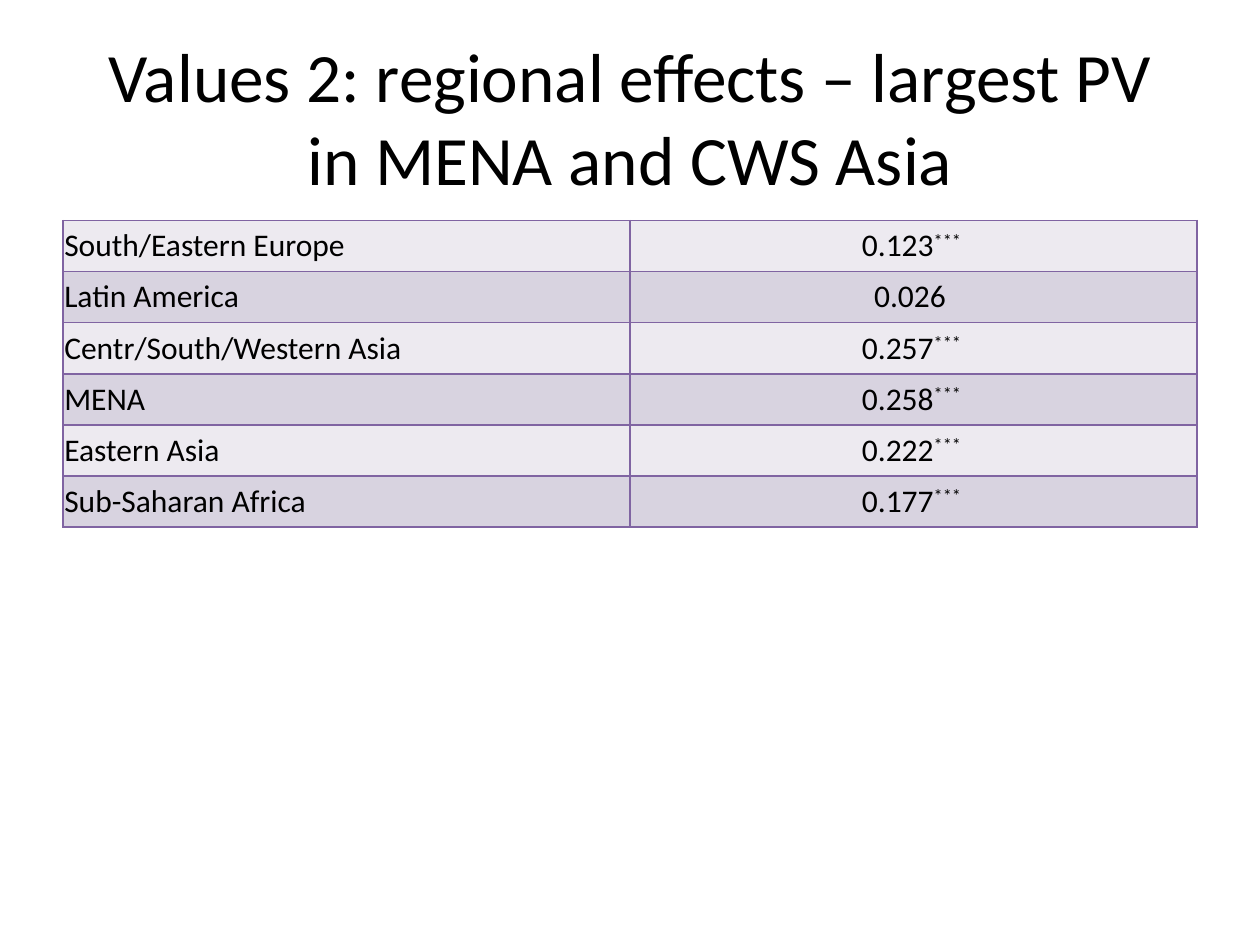
from dataclasses import dataclass

from lxml import etree
from pptx import Presentation
from pptx.dml.color import RGBColor
from pptx.enum.text import MSO_ANCHOR, MSO_AUTO_SIZE, PP_ALIGN
from pptx.oxml.ns import qn
from pptx.table import _Cell
from pptx.text.text import _Run
from pptx.util import Pt

MIDDLE = MSO_ANCHOR.MIDDLE
NO_FIT = MSO_AUTO_SIZE.NONE
LEFT, CENTER = PP_ALIGN.LEFT, PP_ALIGN.CENTER
FONT = "Calibri"
COLORS = {"text": "000000", "edge": "8064A2", "light": "EDEAF0", "dark": "D8D3E0"}
SIDE, WIDTH, ROW = 36, 648, 29.2


@dataclass
class Effect:
    region: str
    value: str
    stars: str = "*** "


EFFECTS = [
    Effect("South/Eastern Europe", "0.123"),
    Effect("Latin America", "0.026 ", ""),
    Effect("Centr/South/Western Asia", "0.257"),
    Effect("MENA", "0.258"),
    Effect("Eastern Asia", "0.222"),
    Effect("Sub-Saharan Africa", "0.177"),
]


def style(run: _Run, size: float) -> None:
    run.font.name = FONT
    run.font.size = Pt(size)
    run.font.color.rgb = RGBColor.from_string(COLORS["text"])


def border(cell: _Cell) -> None:
    props = cell._tc.get_or_add_tcPr()
    for spot, side in enumerate(("lnL", "lnR", "lnT", "lnB")):
        line = etree.Element(qn(f"a:{side}"), w=str(Pt(1)))
        fill = etree.SubElement(line, qn("a:solidFill"))
        etree.SubElement(fill, qn("a:srgbClr"), val=COLORS["edge"])
        props.insert(spot, line)


def fill_cell(cell: _Cell, text: str, stars: str, align: PP_ALIGN, tint: str) -> None:
    cell.fill.solid()
    cell.fill.fore_color.rgb = RGBColor.from_string(COLORS[tint])
    cell.vertical_anchor = MIDDLE
    cell.margin_left = cell.margin_right = Pt(0.75)
    cell.margin_top = cell.margin_bottom = Pt(0.75)
    para = cell.text_frame.paragraphs[0]
    para.text = text
    para.alignment = align
    if stars:
        mark = para.add_run()
        mark.text = stars
        mark.font._element.set("baseline", "30000")
    for run in para.runs:
        style(run, 18)
    border(cell)


def main() -> None:
    deck = Presentation()
    deck.slide_width, deck.slide_height = Pt(720), Pt(540)
    slide = deck.slides.add_slide(deck.slide_layouts[5])

    title = slide.shapes.title
    title.left, title.top = Pt(SIDE), Pt(21.6)
    title.width, title.height = Pt(WIDTH), Pt(90)
    frame = title.text_frame
    frame.text = "Values 2: regional effects – largest PV in MENA and CWS Asia"
    frame.word_wrap = True
    frame.auto_size = NO_FIT
    frame.vertical_anchor = MIDDLE
    frame.paragraphs[0].alignment = CENTER
    style(frame.paragraphs[0].runs[0], 39.6)

    count = len(EFFECTS)
    table = slide.shapes.add_table(
        count, 2, Pt(SIDE), Pt(126), Pt(WIDTH), Pt(ROW * count)
    ).table
    table.first_row = False
    for row, effect in enumerate(EFFECTS):
        table.rows[row].height = Pt(ROW)
        tint = "dark" if row % 2 else "light"
        fill_cell(table.cell(row, 0), effect.region, "", LEFT, tint)
        fill_cell(table.cell(row, 1), effect.value, effect.stars, CENTER, tint)

    deck.save("out.pptx")


if __name__ == "__main__":
    main()
